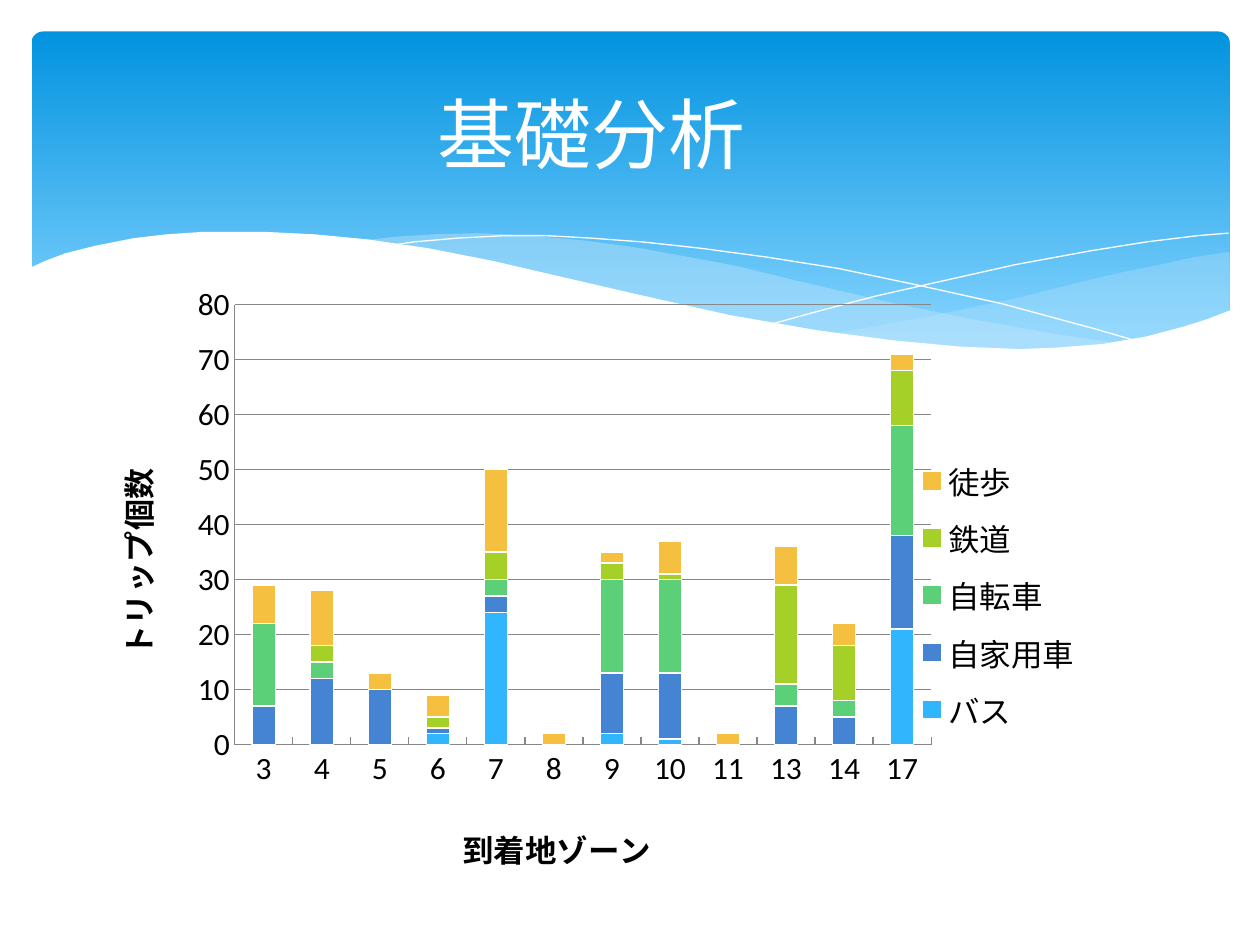
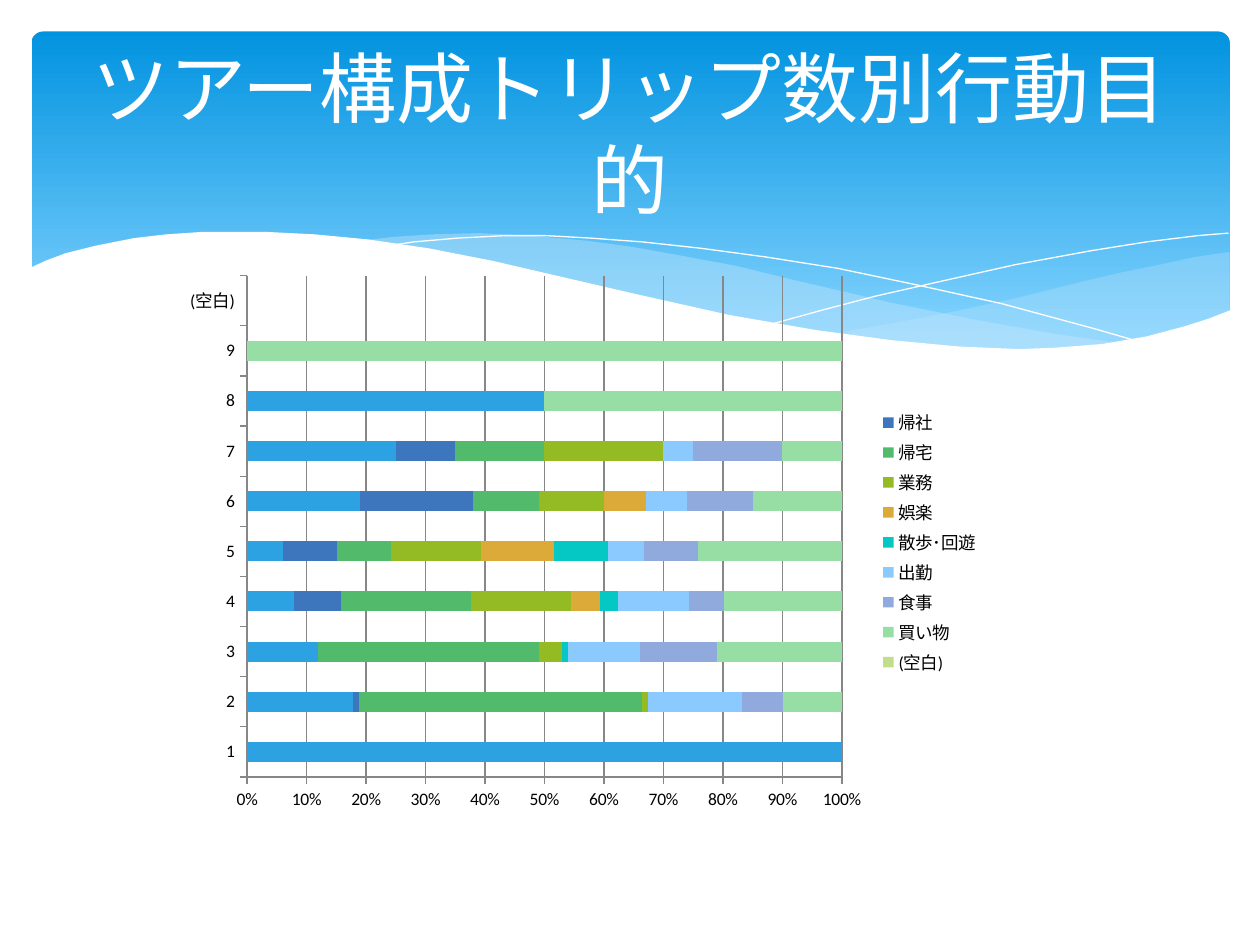
from lxml.etree import SubElement
from pptx import Presentation
from pptx.chart.data import CategoryChartData
from pptx.dml.color import RGBColor
from pptx.enum.chart import XL_CHART_TYPE, XL_LEGEND_POSITION, XL_TICK_MARK
from pptx.enum.shapes import MSO_SHAPE
from pptx.enum.text import MSO_ANCHOR, MSO_AUTO_SIZE, PP_ALIGN
from pptx.oxml.ns import qn
from pptx.util import Inches, Pt

FONT = "Calibri"
HEX = {
    "white": "FFFFFF", "black": "000000", "grid": "878787",
    "deep": "0293E0", "pale": "83D3FE", "veil": "C6E7FC",
    "sky": "31B6FD", "blue": "4584D3", "green": "5BD078",
    "lime": "A5D028", "gold": "F5C040",
    "sky dark": "2CA2E3", "blue dark": "3D76BD", "green dark": "52BA6B",
    "lime dark": "94BA24", "gold dark": "DBAA39", "teal dark": "05C8C4",
    "sky light": "8BCAFF", "blue light": "90AADE",
    "green light": "97DEA4", "lime light": "C1DE8A",
}
BAND = (0.25, 0.25, 9.51, 2.7)
WAVE = (0.23, 1.84)
HEAD = (0.5, 0.37, 9, 1.37)

RIGHT = [
    (9.52, 0.16), (9.25, 0.2), (8.98, 0.26), (8.68, 0.32), (8.38, 0.39),
    (7.82, 0.53), (7.3, 0.64), (6.83, 0.73), (6.38, 0.81), (6.68, 0.85),
    (6.96, 0.88), (7.34, 0.92), (7.8, 0.94), (8.21, 0.93), (8.58, 0.89),
    (8.9, 0.83), (9.12, 0.78), (9.26, 0.73), (9.53, 0.63), (9.53, 0.16),
]
MID = [
    (8.7, 0.89), (8.14, 0.81), (7.52, 0.7), (6.83, 0.56), (6.06, 0.38),
    (5.61, 0.27), (5.18, 0.19), (4.79, 0.12), (4.42, 0.07), (3.97, 0.03),
    (3.57, 0.01), (3.21, 0.02), (2.9, 0.04), (2.63, 0.07), (3, 0.12),
    (3.39, 0.19), (3.81, 0.27), (4.26, 0.38), (4.68, 0.48), (5.07, 0.56),
    (5.61, 0.68), (6.11, 0.77), (6.57, 0.84), (6.99, 0.9), (7.38, 0.93),
    (7.84, 0.94), (8.25, 0.93),
]
FALL = [
    (2.86, 0.11), (3.05, 0.08), (3.4, 0.05), (3.78, 0.03), (4.1, 0.03),
    (4.46, 0.05), (4.87, 0.08), (5.33, 0.13), (5.85, 0.2), (6.42, 0.29),
    (7.04, 0.42), (7.72, 0.57), (8.46, 0.77), (8.84, 0.88),
]
RISE = [
    (5.9, 0.73), (6.3, 0.62), (6.72, 0.51), (7.25, 0.39), (7.83, 0.26),
    (8.43, 0.15), (8.87, 0.08), (9.28, 0.03), (9.52, 0.01),
]
FOOT = [
    (9.54, 0.62), (9.36, 0.69), (9.17, 0.75), (8.87, 0.83), (8.52, 0.89),
    (8.14, 0.92), (7.86, 0.93), (7.38, 0.91), (6.85, 0.86), (6.25, 0.78),
    (5.56, 0.66), (4.8, 0.49), (4.24, 0.36), (3.68, 0.23), (3.17, 0.13),
    (2.69, 0.06), (2.27, 0.02), (1.88, 0), (1.38, 0), (1.09, 0.02),
    (0.83, 0.05), (0.53, 0.11), (0.29, 0.17), (0.13, 0.23), (0, 0.29),
    (0, 1.45), (9.54, 1.45),
]

MODES = {
    "box": (0.43, 2.1, 8.19, 4.89),
    "kind": XL_CHART_TYPE.COLUMN_STACKED,
    "size": 18,
    "tick": XL_TICK_MARK.INSIDE,
    "form": "General",
    "cats": ["3", "4", "5", "6", "7", "8", "9", "10", "11", "13", "14", "17"],
    "rows": [
        ("バス", "sky",
         [None, None, None, 2, 24, None, 2, 1, None, None, None, 21]),
        ("自家用車", "blue", [7, 12, 10, 1, 3, None, 11, 12, None, 7, 5, 17]),
        ("自転車", "green",
         [15, 3, None, None, 3, None, 17, 17, None, 4, 3, 20]),
        ("鉄道", "lime", [None, 3, None, 2, 5, None, 3, 1, None, 18, 10, 10]),
        ("徒歩", "gold", [7, 10, 3, 4, 15, 2, 2, 6, 2, 7, 4, 3]),
    ],
}
GOALS = {
    "box": (1.38, 2.1, 6.49, 4.41),
    "kind": XL_CHART_TYPE.BAR_STACKED_100,
    "size": 10,
    "tick": XL_TICK_MARK.OUTSIDE,
    "form": "0%",
    "cats": ["1", "2", "3", "4", "5", "6", "7", "8", "9", "(空白)"],
    "rows": [
        ("その他", "sky dark", [100, 18, 12, 8, 6, 19, 25, 50, None, None]),
        ("帰社", "blue dark",
         [None, 1, None, 8, 9, 19, 10, None, None, None]),
        ("帰宅", "green dark",
         [None, 48, 37, 22, 9, 11, 15, None, None, None]),
        ("業務", "lime dark",
         [None, 1, 4, 17, 15, 11, 20, None, None, None]),
        ("娯楽", "gold dark",
         [None, None, None, 5, 12, 7, None, None, None, None]),
        ("散歩･回遊", "teal dark",
         [None, None, 1, 3, 9, None, None, None, None, None]),
        ("出勤", "sky light", [None, 16, 12, 12, 6, 7, 5, None, None, None]),
        ("食事", "blue light", [None, 7, 13, 6, 9, 11, 15, None, None, None]),
        ("買い物", "green light",
         [None, 10, 21, 20, 24, 15, 10, 50, 100, None]),
        ("(空白)", "lime light", [None] * 10),
    ],
}


def tint(name):
    return RGBColor.from_string(HEX[name])


def put(item, vals):
    for key, val in vals.items():
        setattr(item, key, val)


def place(item, box):
    put(item, dict(zip(("left", "top", "width", "height"), map(Inches, box))))


def paint(fill, name, alpha=None):
    fill.solid()
    fill.fore_color.rgb = tint(name)
    return alpha


def stroke(line, name, width):
    line.color.rgb = tint(name)
    line.width = Pt(width)


def trace(slide, spot, points, closed):
    dots = [(Inches(x), Inches(y)) for x, y in points]
    pen = slide.shapes.build_freeform(*dots[0], scale=1.0)
    pen.add_line_segments(dots[1:], close=closed)
    shape = pen.convert_to_shape(*map(Inches, spot))
    shape.shadow.inherit = False
    return shape


def patch(slide, spot, points, name, alpha=100):
    shape = trace(slide, spot, points, True)
    paint(shape.fill, name)
    shape.line.fill.background()
    color = shape.element.spPr.find(f".//{qn('a:srgbClr')}")
    SubElement(color, qn("a:alpha"), val=str(alpha * 1000))
    return shape


def curve(slide, spot, points):
    shape = trace(slide, spot, points, False)
    shape.fill.background()
    stroke(shape.line, "white", 0)
    return shape


def panel(slide, box):
    shape = slide.shapes.add_shape(
        MSO_SHAPE.ROUNDED_RECTANGLE, *map(Inches, box))
    shape.adjustments[0] = 0.034
    shape.shadow.inherit = False
    shape.line.fill.background()
    shape.fill.gradient()
    shape.fill.gradient_angle = 270
    stops = zip(shape.fill.gradient_stops, ("deep", "pale"), (0, 0.9))
    for stop, name, pos in stops:
        stop.color.rgb = tint(name)
        stop.position = pos
    return shape


def dress(slide, layout):
    parts = [
        panel(slide, BAND),
        patch(slide, WAVE, RIGHT, "veil", 29),
        patch(slide, WAVE, MID, "veil", 40),
        curve(slide, WAVE, FALL),
        curve(slide, WAVE, RISE),
        patch(slide, WAVE, FOOT, "white"),
    ]
    for rank, part in enumerate(parts):
        part.element.xpath("./*/p:cNvPr")[0].set("id", str(100 + rank))
        layout.shapes.element.insert(2 + rank, part.element)


def title(slide, text, box):
    head = slide.shapes.title
    place(head, box)
    frame = head.text_frame
    frame.text = text
    put(frame, {"word_wrap": True, "auto_size": MSO_AUTO_SIZE.NONE,
                "vertical_anchor": MSO_ANCHOR.MIDDLE})
    para = frame.paragraphs[0]
    para.alignment = PP_ALIGN.CENTER
    put(para.font, {"name": FONT, "size": Pt(44)})
    para.font.color.rgb = tint("white")


def arrange(node, rank, inner=False, **spots):
    for old in node.findall(qn("c:layout")):
        node.remove(old)
    frame = node.makeelement(qn("c:layout"))
    node.insert(rank, frame)
    manual = SubElement(frame, qn("c:manualLayout"))
    if inner:
        SubElement(manual, qn("c:layoutTarget"), val="inner")
    for key in "xy":
        SubElement(manual, qn(f"c:{key}Mode"), val="edge")
    for key, val in spots.items():
        SubElement(manual, qn(f"c:{key}"), val=str(val))


def graph(slide, spec_):
    data = CategoryChartData()
    data.categories = spec_["cats"]
    for name, _, vals in spec_["rows"]:
        data.add_series(name, vals)
    chart = slide.shapes.add_chart(
        spec_["kind"], *map(Inches, spec_["box"]), data).chart
    put(chart, {"has_title": False, "has_legend": True})
    put(chart.font, {"name": FONT, "size": Pt(spec_["size"])})
    chart.font.color.rgb = tint("black")
    put(chart.legend, {"position": XL_LEGEND_POSITION.RIGHT,
                       "include_in_layout": False})
    plot = chart.plots[0]
    put(plot, {"gap_width": 150, "overlap": 100, "vary_by_categories": False})
    for row, (_, name, _) in zip(plot.series, spec_["rows"]):
        paint(row.format.fill, name)
    for axis in (chart.category_axis, chart.value_axis):
        put(axis, {"major_tick_mark": spec_["tick"],
                   "minor_tick_mark": XL_TICK_MARK.NONE})
        stroke(axis.format.line, "grid", 0.75)
    axis = chart.value_axis
    axis.has_major_gridlines = True
    stroke(axis.major_gridlines.format.line, "grid", 0.75)
    put(axis.tick_labels, {"number_format": spec_["form"],
                           "number_format_is_linked": False})
    return chart


def label(axis, text):
    frame = axis.axis_title.text_frame
    frame.text = text
    put(frame.paragraphs[0].font,
        {"name": FONT, "size": Pt(18), "bold": True})


def modes(slide):
    title(slide, "基礎分析　", HEAD)
    chart = graph(slide, MODES)
    put(chart.value_axis, {"minimum_scale": 0, "maximum_scale": 80,
                           "major_unit": 10})
    for row in chart.plots[0].series:
        stroke(row.format.line, "white", 0.75)
    label(chart.category_axis, "到着地ゾーン")
    label(chart.value_axis, "トリップ個数")
    root = chart.element
    side = root.xpath(".//c:valAx/c:title")[0]
    side.find(f".//{qn('a:bodyPr')}").set("rot", "-5400000")
    arrange(side, 1, x=0.05, y=0.33)
    arrange(root.xpath(".//c:catAx/c:title")[0], 1, x=0.39, y=0.91)
    arrange(root.xpath(".//c:plotArea")[0], 0, True,
            x=0.175, y=0.066, w=0.675, h=0.725)
    arrange(root.xpath(".//c:legend")[0], 1, x=0.83, y=0.3, w=0.17, h=0.49)


def goals(slide):
    title(slide, "ツアー構成トリップ数別行動目的", HEAD)
    chart = graph(slide, GOALS)
    legend = chart.element.xpath(".//c:legend")[0]
    entry = legend.makeelement(qn("c:legendEntry"))
    legend.insert(1, entry)
    SubElement(entry, qn("c:idx"), val="9")
    SubElement(entry, qn("c:delete"), val="1")


def main():
    deck = Presentation()
    put(deck, {"slide_width": Inches(10), "slide_height": Inches(7.5)})
    layout = deck.slide_layouts[5]
    for rank, build in enumerate((modes, goals)):
        slide = deck.slides.add_slide(layout)
        if rank == 0:
            dress(slide, layout)
        build(slide)
    deck.save("out.pptx")


if __name__ == "__main__":
    main()
